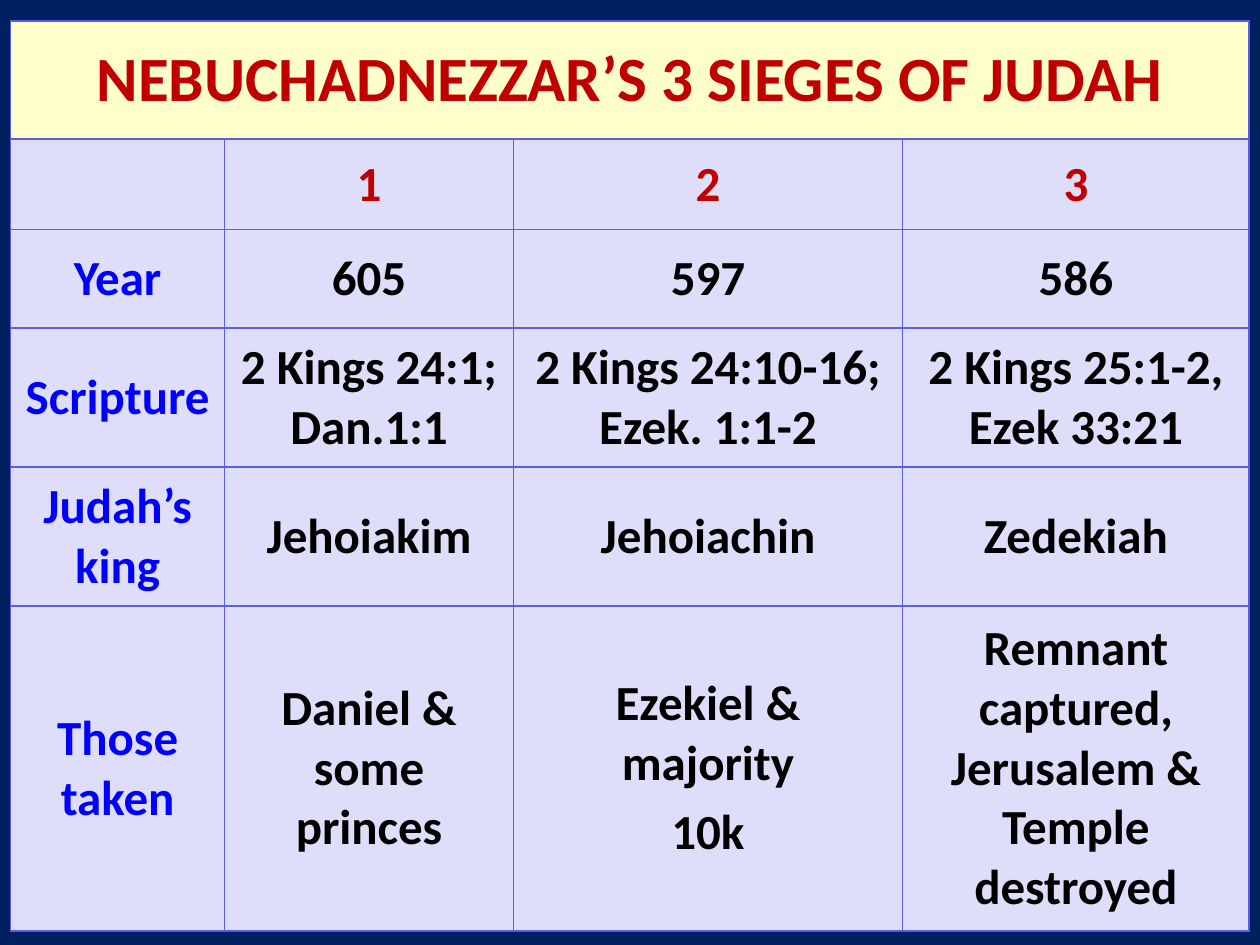
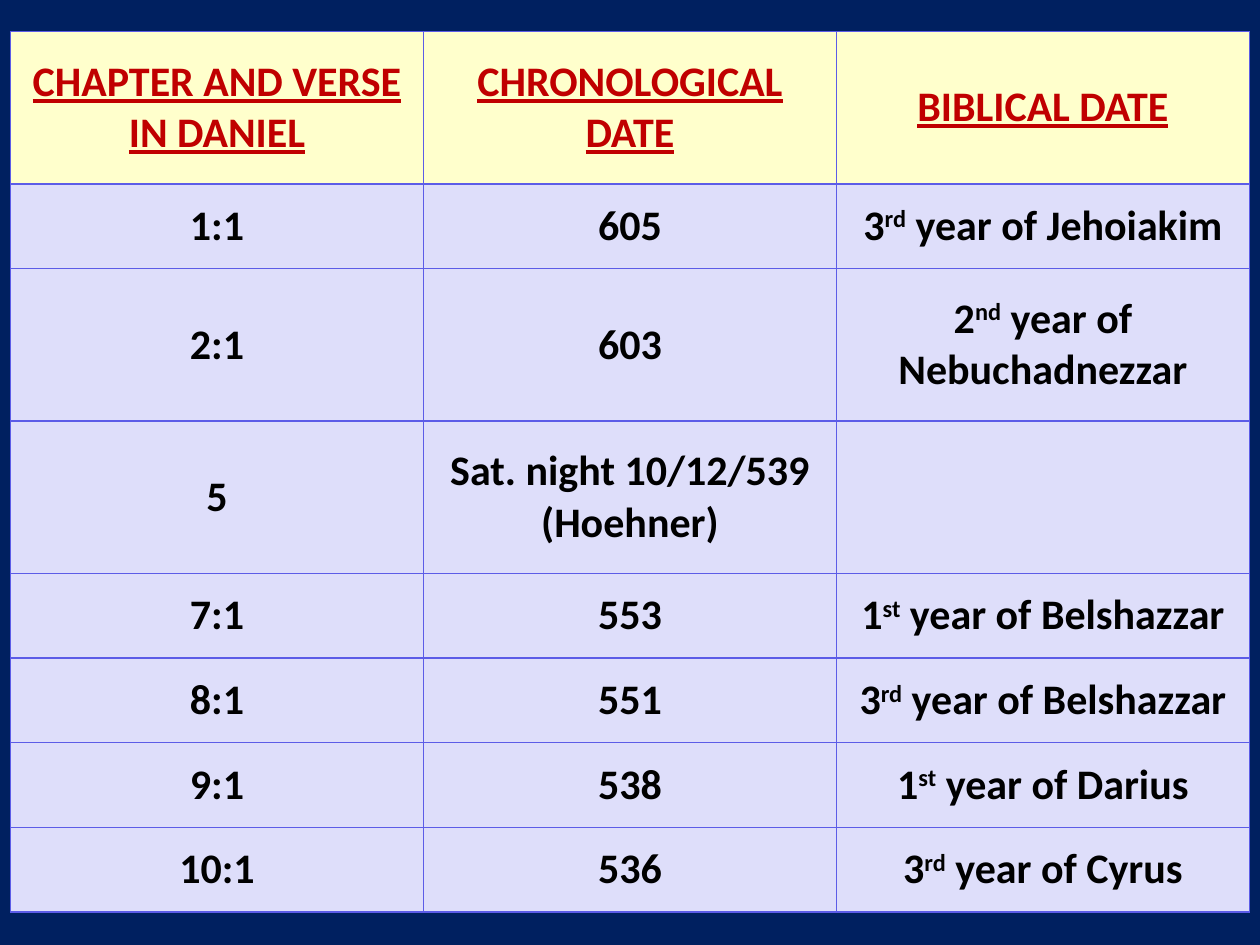
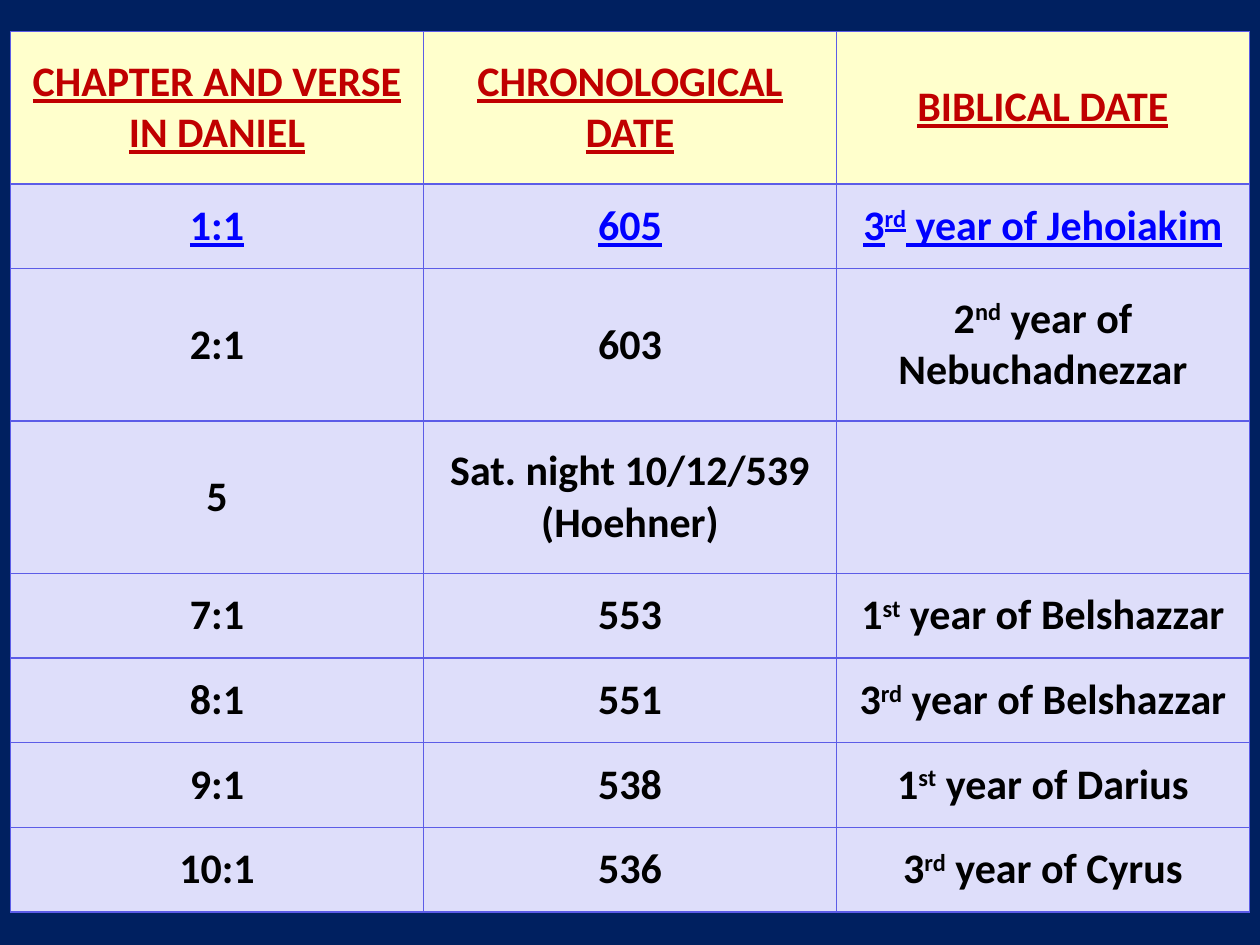
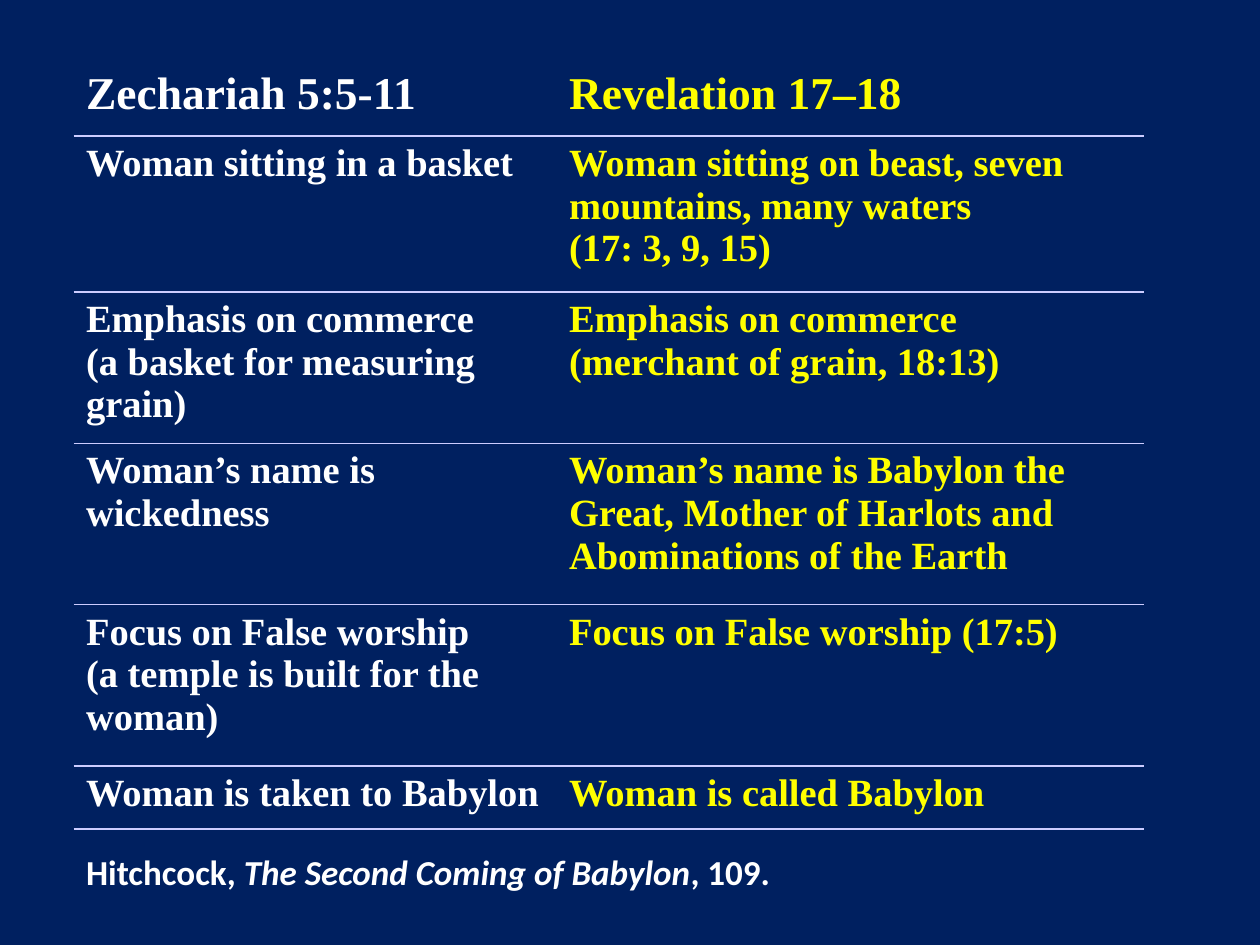
from lxml import etree
from pptx import Presentation
from pptx.dml.color import RGBColor
from pptx.enum.text import MSO_ANCHOR, PP_ALIGN
from pptx.oxml.ns import qn
from pptx.util import Pt

CENTER, LEFT = PP_ALIGN.CENTER, PP_ALIGN.LEFT
MIDDLE, TOP = MSO_ANCHOR.MIDDLE, MSO_ANCHOR.TOP
PLAIN_STYLE = "{2D5ABB26-0587-4C30-8999-92F81FD0307C}"
ALL_SIDES = ("lnL", "lnR", "lnT", "lnB")
C = {
    "navy": "002060", "cream": "FFFFCC", "lilac": "DEDEFA", "grid": "5C5CE7",
    "rule": "CCCCFF", "red": "C00000", "blue": "0000FF", "black": "000000",
    "white": "FFFFFF", "yellow": "FFFF00",
}


def add_grid(slide, left, top, widths, heights):
    frame = slide.shapes.add_table(len(heights), len(widths), Pt(left), Pt(top),
                                   Pt(sum(widths)), Pt(sum(heights)))
    table = frame.table
    table.first_row = table.horz_banding = False
    table._tbl.tblPr.find(qn("a:tableStyleId")).text = PLAIN_STYLE
    for column, width in zip(table.columns, widths):
        column.width = Pt(width)
    for row, height in zip(table.rows, heights):
        row.height = Pt(height)
    return table


def format_cell(cell, text, size, color, font="Calibri", fill=None, sides=ALL_SIDES,
                line="grid", align=CENTER, anchor=MIDDLE, underline=False, before=0):
    tcPr = cell._tc.get_or_add_tcPr()
    for side in sides:
        ln = etree.SubElement(tcPr, qn(f"a:{side}"), w=str(Pt(1)))
        solid = etree.SubElement(ln, qn("a:solidFill"))
        etree.SubElement(solid, qn("a:srgbClr"), val=C[line])
    if fill:
        cell.fill.solid()
        cell.fill.fore_color.rgb = RGBColor.from_string(C[fill])
    else:
        cell.fill.background()
    cell.vertical_anchor = anchor
    tf = cell.text_frame
    for i, content in enumerate(text.split("\n")):
        p = tf.add_paragraph() if i else tf.paragraphs[0]
        p.alignment = align
        p.space_before = Pt(before)
        p.font.name, p.font.size, p.font.bold = font, Pt(size), True
        p.font.underline = underline
        p.font.color.rgb = RGBColor.from_string(C[color])
        for j, part in enumerate(content.split("^")):
            if part:
                r = p.add_run()
                r.text = part
                if j % 2:
                    r._r.get_or_add_rPr().set("baseline", "30000")


prs = Presentation()
prs.slide_width, prs.slide_height = Pt(720), Pt(540)
background = prs.slide_master.background.fill
background.solid()
background.fore_color.rgb = RGBColor.from_string(C["navy"])
title_only, blank = prs.slide_layouts[5], prs.slide_layouts[6]

sieges = [
    ["NEBUCHADNEZZAR’S 3 SIEGES OF JUDAH", "", "", ""],
    ["", "1", "2", "3"],
    ["Year", "605", "597", "586"],
    ["Scripture", "2 Kings 24:1; Dan.1:1", "2 Kings 24:10-16; Ezek. 1:1-2",
     "2 Kings 25:1-2, Ezek 33:21"],
    ["Judah’s king", "Jehoiakim", "Jehoiachin", "Zedekiah"],
    ["Those taken", "Daniel & some princes", "Ezekiel & majority\n10k",
     "Remnant captured, Jerusalem & Temple destroyed"],
]
s = prs.slides.add_slide(blank)
table = add_grid(s, 6, 12, [122.4, 164.9, 222.5, 198],
                 [67.5, 51.7, 56.4, 79.3, 79.4, 185.7])
table.cell(0, 0).merge(table.cell(0, 3))
for row, texts in enumerate(sieges):
    for col, text in enumerate(texts):
        color = "red" if row < 2 else "black" if col else "blue"
        size = 28 if row else 36
        format_cell(table.cell(row, col), text, size, color, before=size / 5,
                    fill="lilac" if row else "cream")

dates = [
    ["CHAPTER AND VERSE IN DANIEL", "CHRONOLOGICAL DATE", "BIBLICAL DATE"],
    ["1:1", "605", "3^rd^ year of Jehoiakim"],
    ["2:1", "603", "2^nd^ year of Nebuchadnezzar"],
    ["5", "Sat. night 10/12/539 (Hoehner)", ""],
    ["7:1", "553", "1^st^ year of Belshazzar"],
    ["8:1", "551", "3^rd^ year of Belshazzar"],
    ["9:1", "538", "1^st^ year of Darius"],
    ["10:1", "536", "3^rd^ year of Cyrus"],
]
tall, short = 87.1, 48.4
for highlighted in (None, 1):
    s = prs.slides.add_slide(blank)
    table = add_grid(s, 6, 18, [236] * 3, [tall, short, tall, tall] + [short] * 4)
    for row, texts in enumerate(dates):
        color = "red" if row == 0 else "blue" if row == highlighted else "black"
        for col, text in enumerate(texts):
            format_cell(table.cell(row, col), text, 24, color, before=4.8,
                        fill="lilac" if row else "cream", underline=color != "black")

parallels = [
    ["Zechariah 5:5-11", "Revelation 17–18"],
    ["Woman sitting in a basket",
     "Woman sitting on beast, seven mountains, many waters\n(17: 3, 9, 15)"],
    ["Emphasis on commerce\n(a basket for measuring grain)",
     "Emphasis on commerce (merchant of grain, 18:13)"],
    ["Woman’s name is wickedness",
     "Woman’s name is Babylon the Great, Mother of Harlots and Abominations of the Earth"],
    ["Focus on False worship\n(a temple is built for the woman)",
     "Focus on False worship (17:5)"],
    ["Woman is taken to Babylon", "Woman is called Babylon"],
]
s = prs.slides.add_slide(title_only)
title = s.shapes.title
title.left, title.top, title.width, title.height = Pt(42), Pt(480), Pt(612), Pt(36)
tf = title.text_frame
tf.vertical_anchor = MIDDLE
p = tf.paragraphs[0]
p.alignment = LEFT
p.font.name, p.font.size, p.font.bold = "Calibri", Pt(20), True
p.font.color.rgb = RGBColor.from_string(C["white"])
for text, italic in (("Hitchcock, ", False), ("The Second Coming of Babylon", True),
                     (", 109.", False)):
    r = p.add_run()
    r.text = text
    r.font.italic = italic

table = add_grid(s, 42, 36, [276, 336], [41.8, 89.2, 86.4, 92.2, 92.2, 36])
for row, texts in enumerate(parallels):
    for col, text in enumerate(texts):
        format_cell(table.cell(row, col), text, 22 if row else 26,
                    "yellow" if col else "white", font="Times New Roman",
                    sides=("lnT", "lnB") if row else ("lnB",), line="rule",
                    align=LEFT, anchor=TOP)

prs.save("out.pptx")
